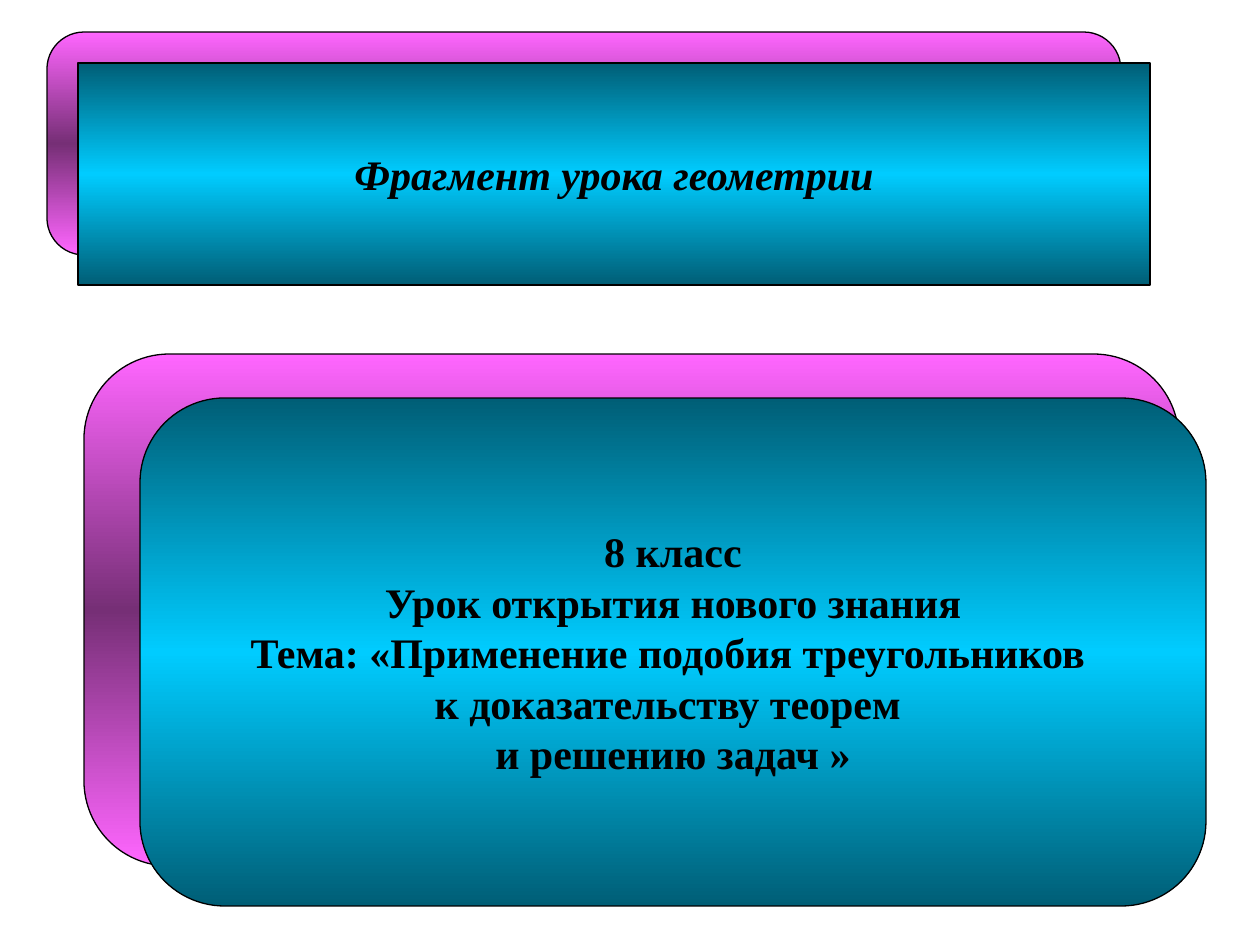
from copy import deepcopy

from lxml.etree import SubElement
from pptx import Presentation
from pptx.dml.color import RGBColor
from pptx.enum.shapes import MSO_SHAPE
from pptx.enum.text import MSO_ANCHOR, MSO_AUTO_SIZE, PP_ALIGN
from pptx.oxml.ns import qn
from pptx.util import Emu, Pt

PX = 914400 / 126
FONT = "Times New Roman"
BLACK = "000000"
SHADE = 46275  # thousandths of a percent

TITLE = ["Фрагмент урока геометрии"]
TOPIC = [
    "8 класс",
    "Урок открытия нового знания",
    "Тема: «Применение подобия треугольников ",
    "к доказательству теорем ",
    "и решению задач »",
]

# left, top, width, height in px
TOPIC_BACK = (84, 354, 1095, 512)
TITLE_BACK = (47, 32, 1074, 223)
TITLE_FRONT = (78, 63, 1072, 222)
TOPIC_FRONT = (140, 398, 1066, 508)

# edge and middle of each gradient: colour, whether it is shaded
PINK = [("FF66FF", False), ("FF66FF", True)]
BLUE = [("00CCFF", True), ("00CCFF", False)]


def px(length):
    return Emu(round(length * PX))


def rgb(value):
    return RGBColor.from_string(value)


def place(shape, box):
    shape.left, shape.top, shape.width, shape.height = map(px, box)


def paint(shape, edge, middle):
    """Fill with a vertical edge-middle-edge gradient and outline in black."""
    shape.fill.gradient()
    shape.fill.gradient_angle = 270
    stops = shape._element.spPr.find(".//" + qn("a:gsLst"))
    for stop in list(stops):
        stops.remove(stop)
    for pos, (value, shaded) in zip((0, 50000, 100000), (edge, middle, edge)):
        stop = SubElement(stops, qn("a:gs"), pos=str(pos))
        colour = SubElement(stop, qn("a:srgbClr"), val=value)
        if shaded:
            SubElement(colour, qn("a:gamma"))
            SubElement(colour, qn("a:shade"), val=str(SHADE))
            SubElement(colour, qn("a:invGamma"))
    shape.line.color.rgb = rgb(BLACK)
    shape.line.width = Pt(0.75)


def add_panel(slide, box, colours):
    panel = slide.shapes.add_shape(
        MSO_SHAPE.FLOWCHART_ALTERNATE_PROCESS, *map(px, box))
    panel.shadow.inherit = False
    paint(panel, *colours)
    return panel


def write(shape, lines, italic=None):
    frame = shape.text_frame
    frame.text = "\n".join(lines)
    frame.word_wrap = False
    frame.auto_size = MSO_AUTO_SIZE.NONE
    frame.vertical_anchor = MSO_ANCHOR.MIDDLE
    for paragraph in frame.paragraphs:
        paragraph.alignment = PP_ALIGN.CENTER
        paragraph.line_spacing = 1.0
        font = paragraph.font
        font.name, font.size = FONT, Pt(24)
        font.bold, font.italic = True, italic
        font.color.rgb = rgb(BLACK)


def main():
    prs = Presentation()
    prs.slide_width, prs.slide_height = px(1260), px(945)
    slide = prs.slides.add_slide(prs.slide_layouts[5])

    add_panel(slide, TOPIC_BACK, PINK)
    title_back = add_panel(slide, TITLE_BACK, PINK)

    # The title takes the panel outline and moves in front of its back panel
    title = slide.shapes.title
    place(title, TITLE_FRONT)
    outline = title_back._element.spPr.find(qn("a:prstGeom"))
    title._element.spPr.append(deepcopy(outline))
    paint(title, *BLUE)
    write(title, TITLE, italic=True)
    title_back._element.addnext(title._element)

    write(add_panel(slide, TOPIC_FRONT, BLUE), TOPIC)
    prs.save("out.pptx")


if __name__ == "__main__":
    main()
